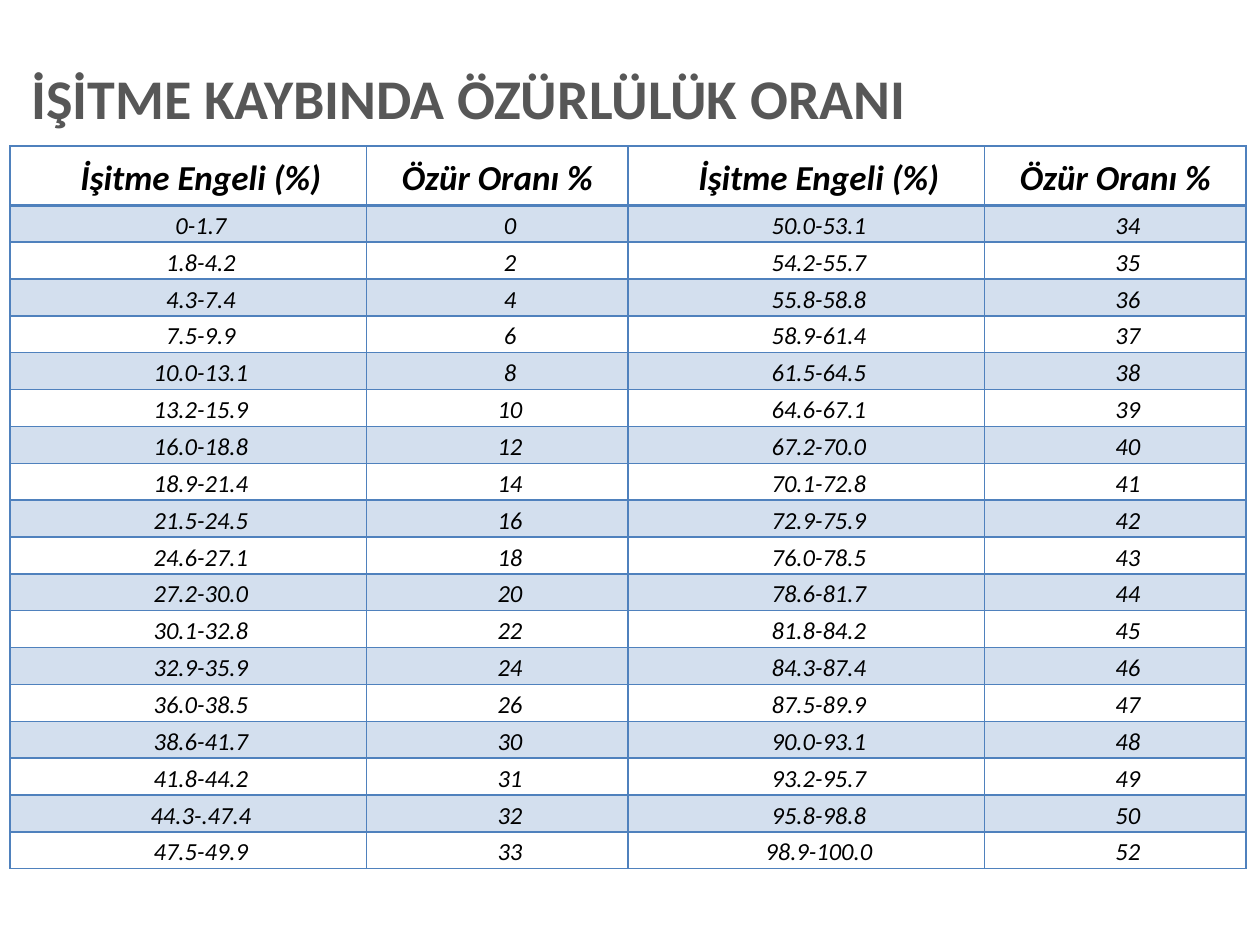
from dataclasses import dataclass

from lxml.etree import SubElement
from pptx import Presentation
from pptx.dml.color import RGBColor
from pptx.enum.text import MSO_ANCHOR, MSO_AUTO_SIZE, PP_ALIGN
from pptx.oxml.ns import qn
from pptx.util import Inches, Pt


@dataclass(frozen=True)
class Theme:
    """Colours, font and type sizes of the slide."""
    font: str = "Calibri"
    title: str = "575757"
    text: str = "000000"
    band: str = "D3DFEE"
    border: str = "4F81BD"
    title_size: float = 32
    header_size: float = 20
    body_size: float = 14
    thin: float = 1
    thick: float = 2.25


THEME = Theme()
TITLE = "İŞİTME KAYBINDA ÖZÜRLÜLÜK ORANI"
HEADER = ("İşitme Engeli (%)", "Özür Oranı %") * 2
RATES = [
    ("0-1.7", "0", "50.0-53.1", "34"),
    ("1.8-4.2", "2", "54.2-55.7", "35"),
    ("4.3-7.4", "4", "55.8-58.8", "36"),
    ("7.5-9.9", "6", "58.9-61.4", "37"),
    ("10.0-13.1", "8", "61.5-64.5", "38"),
    ("13.2-15.9", "10", "64.6-67.1", "39"),
    ("16.0-18.8", "12", "67.2-70.0", "40"),
    ("18.9-21.4", "14", "70.1-72.8", "41"),
    ("21.5-24.5", "16", "72.9-75.9", "42"),
    ("24.6-27.1", "18", "76.0-78.5", "43"),
    ("27.2-30.0", "20", "78.6-81.7", "44"),
    ("30.1-32.8", "22", "81.8-84.2", "45"),
    ("32.9-35.9", "24", "84.3-87.4", "46"),
    ("36.0-38.5", "26", "87.5-89.9", "47"),
    ("38.6-41.7", "30", "90.0-93.1", "48"),
    ("41.8-44.2", "31", "93.2-95.7", "49"),
    ("44.3-.47.4", "32", "95.8-98.8", "50"),
    ("47.5-49.9", "33", "98.9-100.0", "52"),
]


def add_run(p, text, size, color, bold=False, italic=False):
    """Add one formatted run to a paragraph."""
    r = p.add_run()
    r.text = text
    r.font.name = THEME.font
    r.font.size = Pt(size)
    r.font.bold = bold
    r.font.italic = italic
    r.font.color.rgb = RGBColor.from_string(color)


def set_borders(cell, top, bottom):
    """Draw the four cell borders with the given top and bottom weights."""
    tc_pr = cell._tc.get_or_add_tcPr()
    widths = {"L": THEME.thin, "R": THEME.thin, "T": top, "B": bottom}
    for side, width in widths.items():
        ln = SubElement(tc_pr, qn(f"a:ln{side}"), w=str(Pt(width)))
        fill = SubElement(ln, qn("a:solidFill"))
        SubElement(fill, qn("a:srgbClr"), val=THEME.border)


def place_title(slide, left, top, width, height):
    """Move and format the title placeholder."""
    sp = slide.shapes.title
    sp.left, sp.top, sp.width, sp.height = left, top, width, height
    tf = sp.text_frame
    tf.word_wrap = True
    tf.auto_size = MSO_AUTO_SIZE.NONE
    tf.vertical_anchor = MSO_ANCHOR.MIDDLE
    tf.margin_left = tf.margin_right = 0
    tf.margin_top = tf.margin_bottom = Inches(0.05)
    p = tf.paragraphs[0]
    p.alignment = PP_ALIGN.LEFT
    p.line_spacing = 0.9
    add_run(p, TITLE, THEME.title_size, THEME.title, bold=True)


def fill_cell(cell, text, row, col):
    """Write and format one cell according to its row and column."""
    header = row == 0
    set_borders(cell, THEME.thick if row == 1 else THEME.thin,
                THEME.thick if header else THEME.thin)
    if row % 2:
        cell.fill.solid()
        cell.fill.fore_color.rgb = RGBColor.from_string(THEME.band)
    else:
        cell.fill.background()
    cell.vertical_anchor = MSO_ANCHOR.MIDDLE
    cell.margin_left = cell.margin_right = Inches(0.07)
    cell.margin_top = cell.margin_bottom = 0
    p = cell.text_frame.paragraphs[0]
    p.alignment = PP_ALIGN.CENTER
    p.line_spacing = 1.15
    if not header or col % 2 == 0:
        p_pr = p._p.get_or_add_pPr()
        p_pr.set("marL", "0")
        p_pr.set("indent", str(Inches(0.2)))
    add_run(p, text, THEME.header_size if header else THEME.body_size,
            THEME.text, bold=header, italic=True)


def place_rates(slide, left, top, width, height):
    """Add the table of hearing loss and disability rates."""
    rows = [HEADER, *RATES]
    table = slide.shapes.add_table(
        len(rows), len(HEADER), left, top, width, height).table
    table.first_row = table.horz_banding = False
    wide = Inches(2.83)
    for col, column in enumerate(table.columns):
        column.width = width // 2 - wide if col % 2 else wide
    header_height = Inches(0.47)
    for row, values in enumerate(rows):
        table.rows[row].height = (
            (height - header_height) // len(RATES) if row else header_height)
        for col, text in enumerate(values):
            fill_cell(table.cell(row, col), text, row, col)


def main():
    """Build and save the slide."""
    prs = Presentation()
    prs.slide_width, prs.slide_height = Inches(10), Inches(7.5)
    s = prs.slides.add_slide(prs.slide_layouts[5])
    place_title(s, Inches(0.25), Inches(0.45), Inches(9.64), Inches(0.71))
    place_rates(s, Inches(0.08), Inches(1.16), Inches(9.81), Inches(5.74))
    prs.save("out.pptx")


if __name__ == "__main__":
    main()
